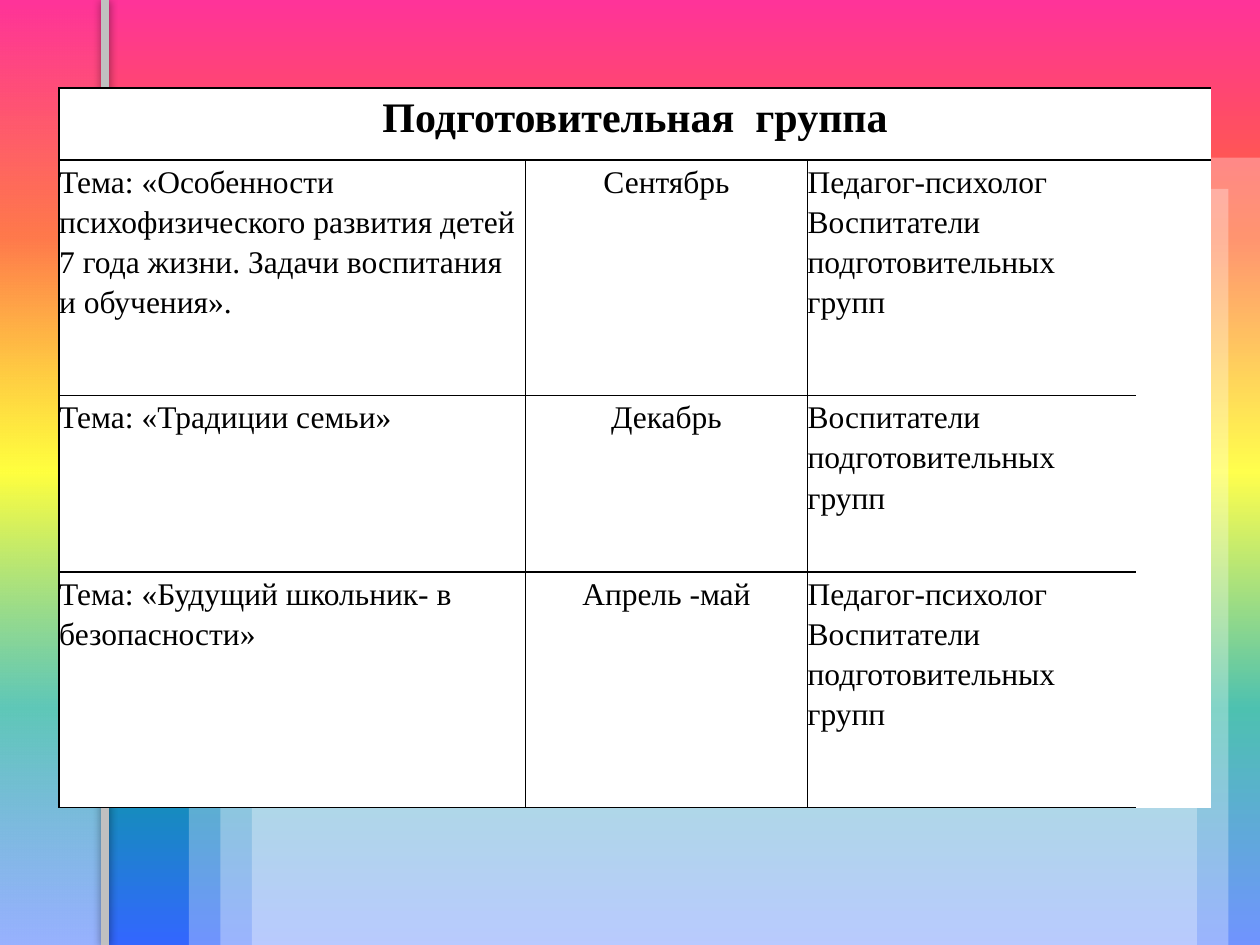
from lxml import etree
from pptx import Presentation
from pptx.dml.color import RGBColor
from pptx.enum.shapes import MSO_CONNECTOR as CONN, MSO_SHAPE as SHAPE
from pptx.enum.text import PP_ALIGN as AL
from pptx.oxml import parse_xml
from pptx.oxml.ns import nsdecls, qn
from pptx.util import Inches, Pt


def rgb(color):
    return RGBColor.from_string(color)


def set_gradient(fill, element, angle, stops):
    """Fill with (position %, colour, opacity %) stops; angle is counter-clockwise."""
    fill.gradient()
    fill.gradient_angle = angle
    stop_list = element.find(".//" + qn("a:gsLst"))
    stop_list.clear()
    for pos, color, opacity in stops:
        gs = etree.SubElement(stop_list, qn("a:gs"), pos=str(pos * 1000))
        clr = etree.SubElement(gs, qn("a:srgbClr"), val=color)
        etree.SubElement(clr, qn("a:alpha"), val=str(opacity * 1000))


prs = Presentation()
prs.slide_width, prs.slide_height = Inches(10), Inches(7.5)
s = prs.slides.add_slide(prs.slide_layouts[6])

# Rainbow background
rainbow = ["FF3399", "FF6633", "FFFF00", "01A78F", "3366FF"]
set_gradient(s.background.fill, s.element, 270,
             [(25 * i, color, 100) for i, color in enumerate(rainbow)])

# Translucent nested panels, all reaching the bottom edge
for left, top, width in [(1.5, 1.25, 8.5), (1.75, 1.5, 8), (2, 1.75, 7.5)]:
    sp = s.shapes.add_shape(SHAPE.RECTANGLE, Inches(left), Inches(top),
                            Inches(width), Inches(7.5 - top))
    sp.shadow.inherit = False
    sp.line.fill.background()
    sp.fill.solid()
    sp.fill.fore_color.rgb = rgb("FFFFFF")
    clr = sp.element.spPr.find(".//" + qn("a:srgbClr"))
    etree.SubElement(clr, qn("a:alpha"), val="30000")

# Left band and its vertical bar
band = s.shapes.add_shape(SHAPE.RECTANGLE, 0, 0, Inches(0.85), Inches(7.5))
band.shadow.inherit = False
band.line.fill.background()
set_gradient(band.fill, band.element, 90, [(0, "FFFFFF", 50), (100, "FFFFFF", 0)])

bar = s.shapes.add_connector(CONN.STRAIGHT, Inches(0.83), 0, Inches(0.83), Inches(7.5))
bar.line.color.rgb = rgb("C0C0C0")
bar.line.width = Pt(4.5)
bar.element.spPr.append(parse_xml(
    f'<a:effectLst {nsdecls("a")}><a:outerShdw blurRad="{Pt(5)}" dist="0" dir="0">'
    '<a:srgbClr val="000000"><a:alpha val="40000"/></a:srgbClr>'
    '</a:outerShdw></a:effectLst>'))

# Table of meetings: each cell is a list of paragraphs
psychologist = "Педагог-психолог"
teachers = "Воспитатели подготовительных групп"
rows = [
    [["Подготовительная  группа"], [], [], []],
    [["Тема: «Особенности психофизического развития детей 7 года жизни. "
      "Задачи воспитания и обучения»."], ["Сентябрь"], [psychologist, teachers], []],
    [["Тема: «Традиции семьи»"], ["Декабрь"], [teachers], []],
    [["Тема: «Будущий школьник- в безопасности»"], ["Апрель -май"],
     [psychologist, teachers], []],
]
# Sides with a line, by column
header_sides = ["LTB", "TB", "TB", "TB"]
first_sides = ["LRTB", "LRTB", "LTB", "T"]
body_sides = ["LRTB", "LRTB", "LTB", ""]
sides = [header_sides, first_sides, body_sides, body_sides]

table = s.shapes.add_table(4, 4, Inches(0.47), Inches(0.7),
                           Inches(9.14), Inches(5.71)).table
for col, width in zip(table.columns, [3.7, 2.24, 2.61, 0.59]):
    col.width = Inches(width)
for row, height in zip(table.rows, [0.57, 1.87, 1.4, 1.87]):
    row.height = Inches(height)
table.cell(0, 0).merge(table.cell(0, 3))

for r_i, row in enumerate(rows):
    for c_i, paragraphs in enumerate(row):
        cell = table.cell(r_i, c_i)
        cell.fill.solid()
        cell.fill.fore_color.rgb = rgb("FFFFFF")
        cell.margin_left = cell.margin_right = 0
        cell.margin_top = cell.margin_bottom = 0
        for i, text in enumerate(paragraphs):
            tf = cell.text_frame
            p = tf.paragraphs[0] if i == 0 else tf.add_paragraph()
            p.alignment = AL.CENTER if r_i == 0 or c_i == 1 else AL.LEFT
            p.line_spacing = 1.15
            r = p.add_run()
            r.text = text
            r.font.name = "Times New Roman"
            r.font.size = Pt(24 if r_i == 0 else 18)
            r.font.bold = r_i == 0
            r.font.color.rgb = rgb("000000")
        tc_pr = cell._tc.get_or_add_tcPr()
        for i, side in enumerate("LRTB"):
            paint = ('<a:solidFill><a:srgbClr val="000000"/></a:solidFill>'
                     if side in sides[r_i][c_i] else "<a:noFill/>")
            tc_pr.insert(i, parse_xml(
                f'<a:ln{side} {nsdecls("a")} w="{Pt(1)}">{paint}</a:ln{side}>'))

prs.save("out.pptx")
